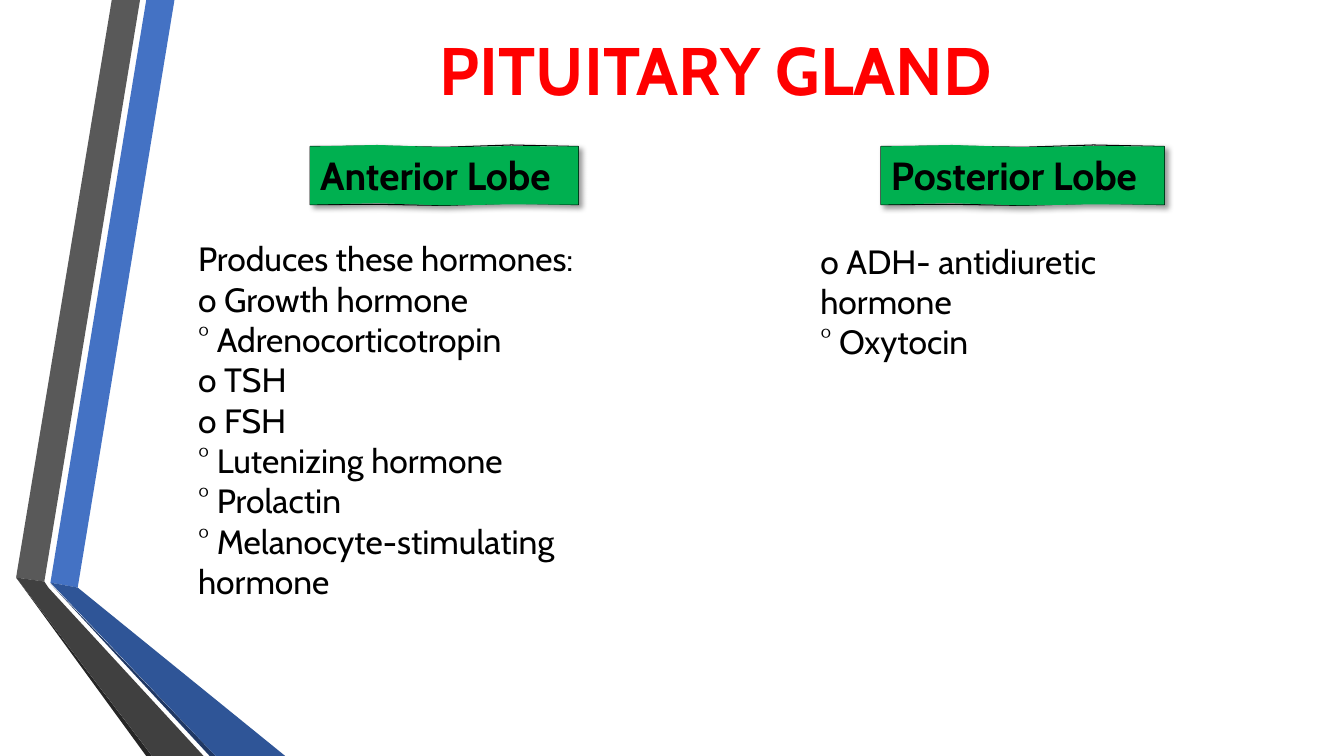
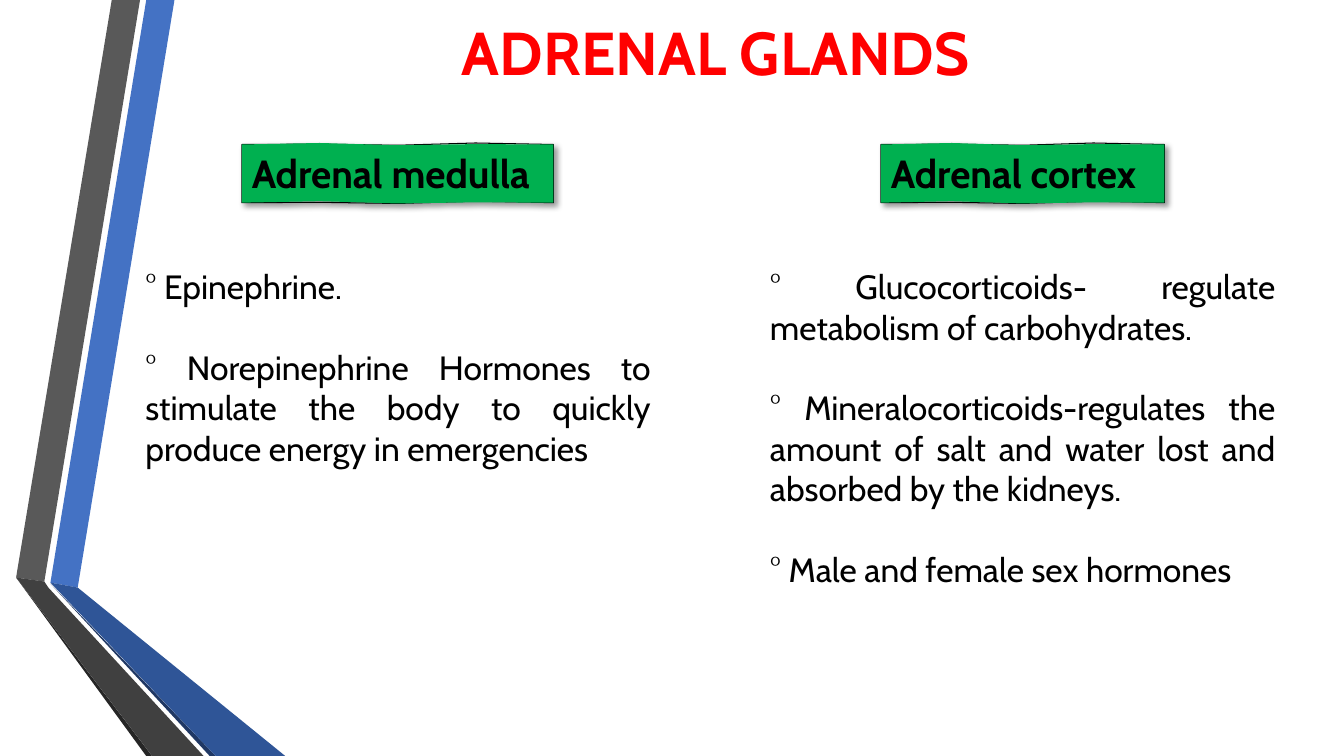
from copy import deepcopy

from lxml.etree import SubElement
from pptx import Presentation
from pptx.dml.color import RGBColor
from pptx.enum.text import MSO_ANCHOR, PP_ALIGN
from pptx.oxml.ns import qn
from pptx.util import Inches, Pt

FONT = "Cabin"
WIDE, HIGH = Inches(13.33), Inches(7.5)
BLACK, RED, GREEN = "000000", "FF0000", "00B050"
LEFT, MID, JUST = PP_ALIGN.LEFT, PP_ALIGN.CENTER, PP_ALIGN.JUSTIFY
WAVE = (0, -0.05, 0.1, -0.2, 0)
BANDS = [
    ("4472C4", [(3.75, 77.07), (5.78, 77.73), (12.98, 0), (10.88, 0)]),
    ("595959", [(10.42, 0), (8.32, 0), (1.2, 76.4), (3.3, 76.93)]),
    ("262626", [(1.2, 76.4), (10.88, 100), (11.32, 100)]),
    ("203864", [(3.75, 77.2), (15.6, 100), (16.05, 100)]),
    ("2F5597", [(3.75, 77.07), (16.05, 100), (21.22, 100), (5.78, 77.73)]),
    ("404040", [(15.15, 100), (3.6, 77.73), (3.3, 76.93), (1.2, 76.4), (11.32, 100)]),
]


def across(share):
    """Turn a percentage of the slide width into a length."""
    return round(WIDE * share / 100)


def down(share):
    """Turn a percentage of the slide height into a length."""
    return round(HIGH * share / 100)


def color(code):
    """Turn a hex string into a colour."""
    return RGBColor.from_string(code)


def outline(slide, points, fill):
    """Draw a filled outline through points given as shares of the slide."""
    spots = [(across(x), down(y)) for x, y in points]
    pen = slide.shapes.build_freeform(*spots[0])
    pen.add_line_segments(spots[1:], close=True)
    shape = pen.convert_to_shape()
    shape.shadow.inherit = False
    shape.fill.solid()
    shape.fill.fore_color.rgb = color(fill)
    shape.line.fill.background()
    return shape


def write(frame, lines, size, tint=BLACK, bold=False, align=LEFT, gap=0):
    """Fill a text frame with one run per paragraph."""
    frame.word_wrap = True
    for i, line in enumerate(lines):
        para = frame.add_paragraph() if i else frame.paragraphs[0]
        para.alignment = align
        para.space_before = Pt(gap if i else 0)
        run = para.add_run()
        run.text = line
        run.font.name = FONT
        run.font.size = Pt(size)
        run.font.bold = bold
        run.font.color.rgb = color(tint)


def text(slide, x, y, w, h, lines, size, **style):
    """Place a text box and return its frame."""
    box = slide.shapes.add_textbox(across(x), down(y), across(w), down(h))
    write(box.text_frame, lines, size, **style)
    return box.text_frame


def title(slide, y, h, words, size):
    """Place the red slide title."""
    frame = text(slide, 12.15, y, 82.2, h, [words], size,
                 tint=RED, bold=True, align=MID)
    frame.vertical_anchor = MSO_ANCHOR.MIDDLE


def wavy(x, y, w, h):
    """List the corners of a box whose long sides wave."""
    last = len(WAVE) - 1
    top = [(x + w * i / last, y + lift) for i, lift in enumerate(WAVE)]
    base = [(px, py + h) for px, py in top]
    return top + base[::-1]


def sketch(shape):
    """Split a shape into a black edge and a mirrored fill over it."""
    shape.line.color.rgb = color(BLACK)
    shape.line.width = Pt(0.75)
    edge = next(shape.element.iter(qn("a:path")))
    body = deepcopy(edge)
    edge.set("fill", "none")
    body.set("stroke", "0")
    for spot in body.iter(qn("a:pt")):
        spot.set("x", str(int(body.get("w")) - int(spot.get("x"))))
    edge.addnext(body)


def shade(shape):
    """Give a shape a soft shadow to the lower right."""
    effects = shape.element.spPr.find(qn("a:effectLst"))
    cast = SubElement(effects, qn("a:outerShdw"), blurRad=str(Pt(4)),
                      dist=str(Pt(3)), dir="2700000", algn="tl", rotWithShape="0")
    tone = SubElement(cast, qn("a:srgbClr"), val=BLACK)
    SubElement(tone, qn("a:alpha"), val="40000")


def label(slide, x, y, w, words):
    """Draw a green hand-cut label with a sketched edge."""
    card = outline(slide, wavy(x, y, w, 7.7), GREEN)
    sketch(card)
    shade(card)
    card.text_frame.vertical_anchor = MSO_ANCHOR.MIDDLE
    write(card.text_frame, [words], 28, bold=True)


def dress(slide, layout):
    """Draw the folded bands and hand them to the layout."""
    for fill, points in BANDS:
        band = outline(slide, points, fill)
        layout.shapes.element.append(band.element)


def first(slide):
    """Fill the slide on the pituitary gland."""
    title(slide, 2.67, 12.93, "PITUITARY GLAND", 48)
    label(slide, 23.08, 19.38, 19.95, "Anterior Lobe")
    label(slide, 65.55, 19.38, 21.08, "Posterior Lobe")
    text(slide, 14, 30.85, 38.1, 44.4, [
        "Produces these hormones:",
        "o Growth hormone",
        "° Adrenocorticotropin",
        "o TSH",
        "o FSH",
        "° Lutenizing hormone",
        "° Prolactin",
        "° Melanocyte-stimulating hormone",
    ], 24)
    text(slide, 60.3, 31.15, 31.58, 12.13,
         ["o ADH- antidiuretic hormone", "° Oxytocin"], 24)


def second(slide):
    """Fill the slide on the adrenal glands."""
    title(slide, 2.27, 9.07, "ADRENAL GLANDS", 43.2)
    label(slide, 18, 19.12, 23.18, "Adrenal medulla")
    label(slide, 65.55, 19.12, 21.08, "Adrenal cortex")
    style = {"size": 24, "align": JUST, "gap": 28.8}
    text(slide, 10.08, 34.58, 39.08, 28.27, [
        "° Epinephrine.",
        "° Norepinephrine Hormones to stimulate the body to quickly "
        "produce energy in emergencies",
    ], **style)
    text(slide, 56.55, 34.58, 39.08, 44.4, [
        "° Glucocorticoids- regulate metabolism of carbohydrates.",
        "° Mineralocorticoids-regulates the amount of salt and water lost "
        "and absorbed by the kidneys.",
        "° Male and female sex hormones",
    ], **style)


def main():
    """Build and save the deck."""
    deck = Presentation()
    deck.slide_width, deck.slide_height = WIDE, HIGH
    blank = deck.slide_layouts[6]
    slides = [deck.slides.add_slide(blank) for _ in range(2)]
    dress(slides[0], blank)
    for fill, slide in zip((first, second), slides):
        fill(slide)
    deck.save("out.pptx")


if __name__ == "__main__":
    main()
